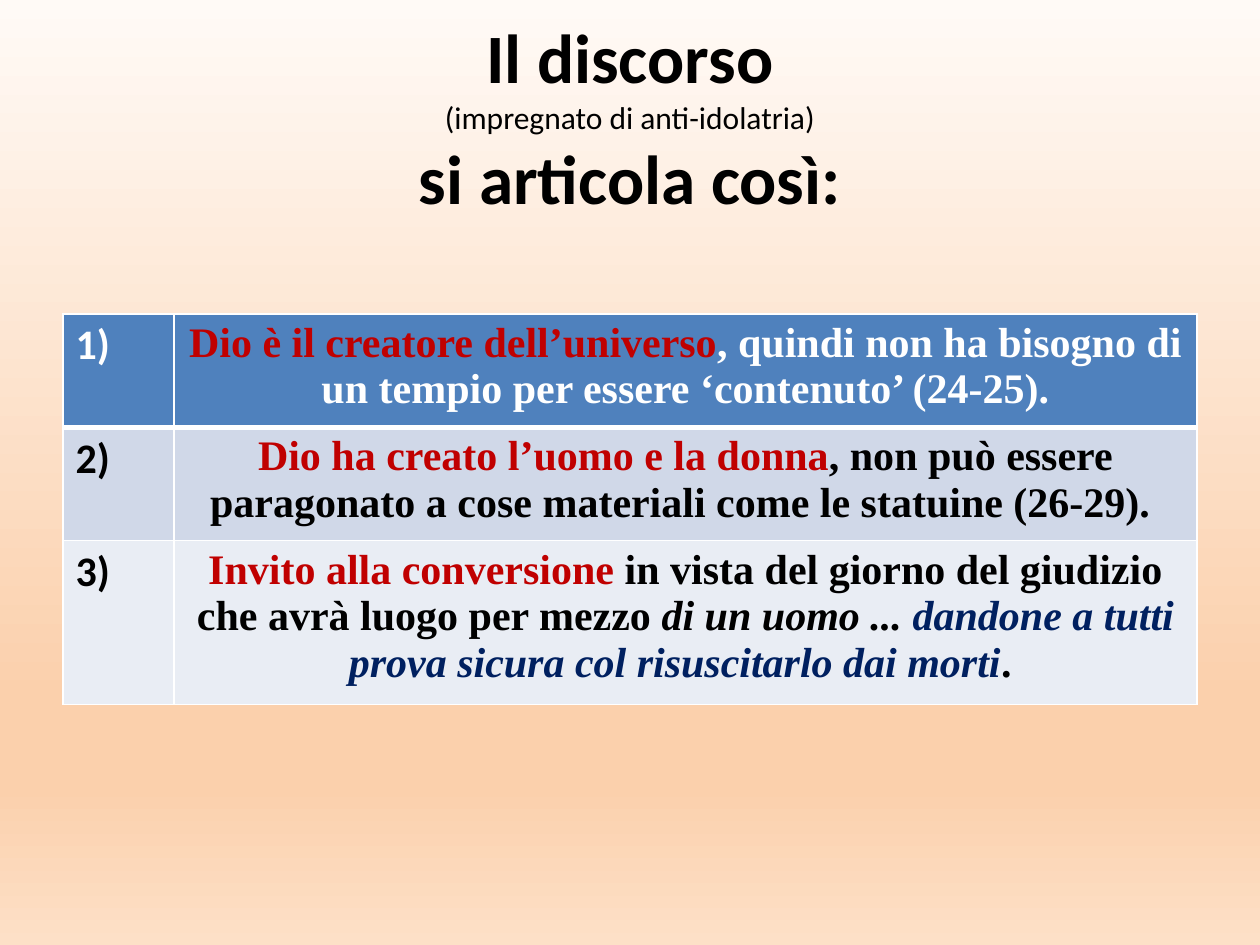
from dataclasses import dataclass

from lxml.etree import SubElement
from pptx import Presentation
from pptx.dml.color import RGBColor
from pptx.enum.text import MSO_ANCHOR, PP_ALIGN
from pptx.oxml.ns import qn
from pptx.util import Inches, Pt


@dataclass(frozen=True)
class Theme:
    sans: str = "Calibri"
    serif: str = "Times New Roman"
    heading: float = 39.6
    aside: float = 18
    body: float = 24
    black: str = "000000"
    white: str = "FFFFFF"
    red: str = "C00000"
    navy: str = "002060"
    row_fills: tuple = ("4F81BD", "D0D8E8", "E9EDF4")
    backdrop: tuple = ((0, "FFFAF6"), (74, "FBD0AC"), (83, "FBD0AC"), (100, "FDE0C7"))


class SlideBuilder:
    def __init__(self, deck, theme):
        self.theme = theme
        self.width, self.height = deck.slide_width, deck.slide_height
        self.slide = deck.slides.add_slide(deck.slide_layouts[6])

    def area(self, left, top, width, height):
        """Turn shares of the slide's size into lengths."""
        return (round(left * self.width), round(top * self.height),
                round(width * self.width), round(height * self.height))

    def background(self):
        fill = self.slide.background.fill
        fill.gradient()
        fill.gradient_angle = 270
        stops = self.slide.element.find(".//" + qn("a:gsLst"))
        for stop in list(stops):
            stops.remove(stop)
        for share, color in self.theme.backdrop:
            stop = SubElement(stops, qn("a:gs"), pos=str(share * 1000))
            SubElement(stop, qn("a:srgbClr"), val=color)

    def style(self, font, size, bold, name, color=None):
        font.size, font.bold, font.name = Pt(size), bold, name
        if color:
            font.color.rgb = RGBColor.from_string(color)

    def title(self, lines, *shares):
        frame = self.slide.shapes.add_textbox(*self.area(*shares)).text_frame
        frame.word_wrap = True
        frame.vertical_anchor = MSO_ANCHOR.MIDDLE
        frame.text = "\n".join(text for text, _, _ in lines)
        for paragraph, (_, size, bold) in zip(frame.paragraphs, lines):
            paragraph.alignment = PP_ALIGN.CENTER
            self.style(paragraph.font, size, bold, self.theme.sans, self.theme.black)

    def borders(self, cell, **widths):
        properties = cell._tc.get_or_add_tcPr()
        for index, side in enumerate(("L", "R", "T", "B")):
            line = SubElement(properties, qn(f"a:ln{side}"), w=str(Pt(widths.get(side, 1))))
            color = SubElement(SubElement(line, qn("a:solidFill")), qn("a:srgbClr"))
            color.set("val", self.theme.white)
            properties.insert(index, line)

    def cell(self, cell, runs, name, fill, alignment):
        cell.fill.solid()
        cell.fill.fore_color.rgb = RGBColor.from_string(fill)
        paragraph = cell.text_frame.paragraphs[0]
        paragraph.alignment = alignment
        self.style(paragraph.font, self.theme.body, True, name)
        for text, color, italic in runs:
            run = paragraph.add_run()
            run.text = text
            self.style(run.font, self.theme.body, True, name, color)
            run.font.italic = italic

    def numbered_table(self, points, left, top, columns, rows):
        shares = self.area(left, top, sum(columns), sum(rows))
        table = self.slide.shapes.add_table(len(rows), len(columns), *shares).table
        for column, share in zip(table.columns, columns):
            column.width = round(share * self.width)
        for number, (row, share, runs) in enumerate(zip(table.rows, rows, points), 1):
            row.height = round(share * self.height)
            fill = self.theme.row_fills[number - 1]
            ink = self.theme.white if number == 1 else self.theme.black
            label, statement = row.cells
            self.cell(label, [(f"{number})", ink, False)], self.theme.sans, fill, PP_ALIGN.LEFT)
            self.cell(statement, runs, self.theme.serif, fill, PP_ALIGN.CENTER)
            # A thick rule parts the first row from the rest
            for cell in row.cells:
                self.borders(cell, B=3 if number == 1 else 1, T=3 if number == 2 else 1)


def main():
    theme = Theme()
    deck = Presentation()
    deck.slide_width, deck.slide_height = Inches(10), Inches(7.5)
    page = SlideBuilder(deck, theme)
    page.background()

    # Title
    page.title([
        ("Il discorso", theme.heading, True),
        ("(impregnato di anti-idolatria)", theme.aside, False),
        ("si articola così:", theme.heading, True),
    ], 0.05, 0.04, 0.9, 1 / 6)

    # Three points of the speech
    points = [
        [("Dio è il creatore dell’universo", theme.red, False),
         (", quindi non ha bisogno di un tempio per essere ‘contenuto’ (24-25).",
          theme.white, False)],
        [("Dio ha creato l’uomo e la donna", theme.red, False),
         (", non può essere paragonato a cose materiali come le statuine (26-29). ",
          theme.black, False)],
        [("Invito alla conversione ", theme.red, False),
         ("in vista del giorno del giudizio che avrà luogo per mezzo ", theme.black, False),
         ("di un uomo ... ", theme.black, True),
         ("dandone a tutti prova sicura col risuscitarlo dai morti", theme.navy, True),
         (". ", theme.black, False)],
    ]
    page.numbered_table(points, 0.05, 0.332, (0.088, 0.812), (0.11, 0.11, 0.16))
    deck.save("out.pptx")


if __name__ == "__main__":
    main()
